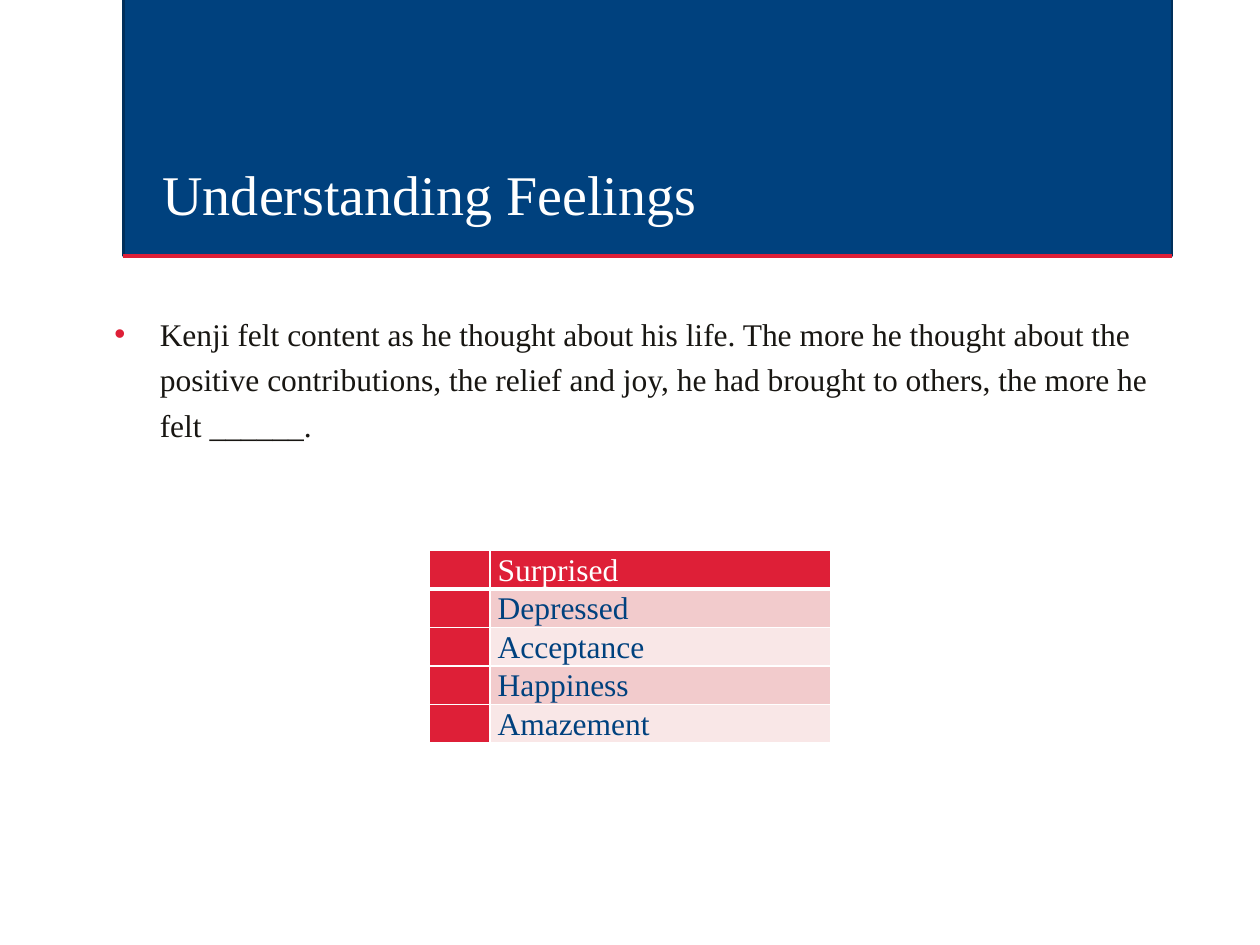
from lxml import etree
from pptx import Presentation
from pptx.dml.color import RGBColor
from pptx.enum.shapes import MSO_CONNECTOR, MSO_SHAPE
from pptx.enum.text import MSO_ANCHOR, MSO_AUTO_SIZE, PP_ALIGN
from pptx.oxml import parse_xml
from pptx.oxml.ns import nsdecls, qn
from pptx.util import Inches, Pt

RECTANGLE = MSO_SHAPE.RECTANGLE
STRAIGHT = MSO_CONNECTOR.STRAIGHT
TOP, BOTTOM = MSO_ANCHOR.TOP, MSO_ANCHOR.BOTTOM
LEFT = PP_ALIGN.LEFT
NO_AUTOSIZE = MSO_AUTO_SIZE.NONE

BLUE = RGBColor(0x00, 0x41, 0x7E)
DARK_BLUE = RGBColor(0x00, 0x2F, 0x5B)
RED = RGBColor(0xDE, 0x1F, 0x37)
PINK = RGBColor(0xF2, 0xCB, 0xCC)
PALE_PINK = RGBColor(0xF9, 0xE7, 0xE7)
INK = RGBColor(0x18, 0x16, 0x12)
WHITE = RGBColor(0xFF, 0xFF, 0xFF)

FEELINGS = ["Surprised", "Depressed", "Acceptance", "Happiness", "Amazement"]
QUESTION = (
    "Kenji felt content as he thought about his life. The more he thought about the "
    "positive contributions, the relief and joy, he had brought to others, the more he "
    "felt ______."
)


def write_text(text_frame, text, size, color, line_spacing):
    paragraph = text_frame.paragraphs[0]
    paragraph.alignment = LEFT
    paragraph.line_spacing = line_spacing
    run = paragraph.add_run()
    run.text = text
    for name, value in {"name": "Times New Roman", "size": Pt(size)}.items():
        setattr(run.font, name, value)
    run.font.color.rgb = color
    return paragraph


def set_borders(cell, bottom_width):
    properties = cell._tc.get_or_add_tcPr()
    widths = {"lnL": 1, "lnR": 1, "lnT": 1, "lnB": bottom_width}
    for index, (side, width) in enumerate(widths.items()):
        border = parse_xml(
            f'<a:{side} {nsdecls("a")} w="{Pt(width)}"><a:solidFill>'
            f'<a:srgbClr val="{WHITE}"/></a:solidFill></a:{side}>'
        )
        properties.insert(index, border)


presentation = Presentation()
presentation.slide_width = Inches(10)
presentation.slide_height = Inches(7.5)
slide = presentation.slides.add_slide(presentation.slide_layouts[5])
title = slide.shapes.title

band = slide.shapes.add_shape(RECTANGLE, Inches(0.98), Inches(-0.02), Inches(8.32), Inches(2.05))
band.shadow.inherit = False
band.fill.solid()
band.fill.fore_color.rgb = BLUE
band.line.color.rgb = DARK_BLUE
band.line.width = Pt(1.25)

rule = slide.shapes.add_connector(STRAIGHT, Inches(0.98), Inches(2.03), Inches(9.3), Inches(2.03))
rule.line.color.rgb = RED
rule.line.width = Pt(2.5)
etree.SubElement(rule.element.spPr, qn("a:effectLst"))

title.element.addprevious(band.element)
title.element.addprevious(rule.element)

title_place = {"left": 1.19, "top": 0.88, "width": 7.88, "height": 0.98}
for name, value in title_place.items():
    setattr(title, name, Inches(value))
title_frame = title.text_frame
body = slide.shapes.add_textbox(Inches(0.67), Inches(2.39), Inches(8.66), Inches(2.98))
body_frame = body.text_frame
for frame, anchor in ((title_frame, BOTTOM), (body_frame, TOP)):
    frame_format = {"word_wrap": True, "auto_size": NO_AUTOSIZE, "vertical_anchor": anchor}
    for name, value in frame_format.items():
        setattr(frame, name, value)
write_text(title_frame, "Understanding Feelings", 32, WHITE, 0.9)

question = write_text(body_frame, QUESTION, 18, INK, 1.2)
question.space_before = Pt(7.5)
question_properties = question._p.get_or_add_pPr()
question_properties.set("marL", str(Inches(0.5)))
question_properties.set("indent", str(Inches(-0.36)))
bullet_color = etree.SubElement(question_properties, qn("a:buClr"))
etree.SubElement(bullet_color, qn("a:srgbClr"), val=str(RED))
etree.SubElement(question_properties, qn("a:buFont"), typeface="Arial")
etree.SubElement(question_properties, qn("a:buChar"), char="•")

row_height = Inches(0.3)
table = slide.shapes.add_table(
    len(FEELINGS), 2, Inches(3.41), Inches(4.37), Inches(3.18), row_height * len(FEELINGS)
).table
table.columns[0].width = Inches(0.48)
table.columns[1].width = Inches(2.7)

cell_margins = {
    "margin_left": Inches(0.06),
    "margin_right": Inches(0.06),
    "margin_top": 0,
    "margin_bottom": 0,
}
for row, feeling in enumerate(FEELINGS):
    is_header = row == 0
    table.rows[row].height = row_height
    stripe = RED if is_header else (PALE_PINK, PINK)[row % 2]
    for column, fill in enumerate((RED, stripe)):
        cell = table.cell(row, column)
        for name, value in cell_margins.items():
            setattr(cell, name, value)
        cell.fill.solid()
        cell.fill.fore_color.rgb = fill
        set_borders(cell, 3 if is_header else 1)
    write_text(cell.text_frame, feeling, 18, WHITE if is_header else BLUE, 1.07)
    cell.text_frame.paragraphs[0].runs[0].font.bold = False

presentation.save("out.pptx")
